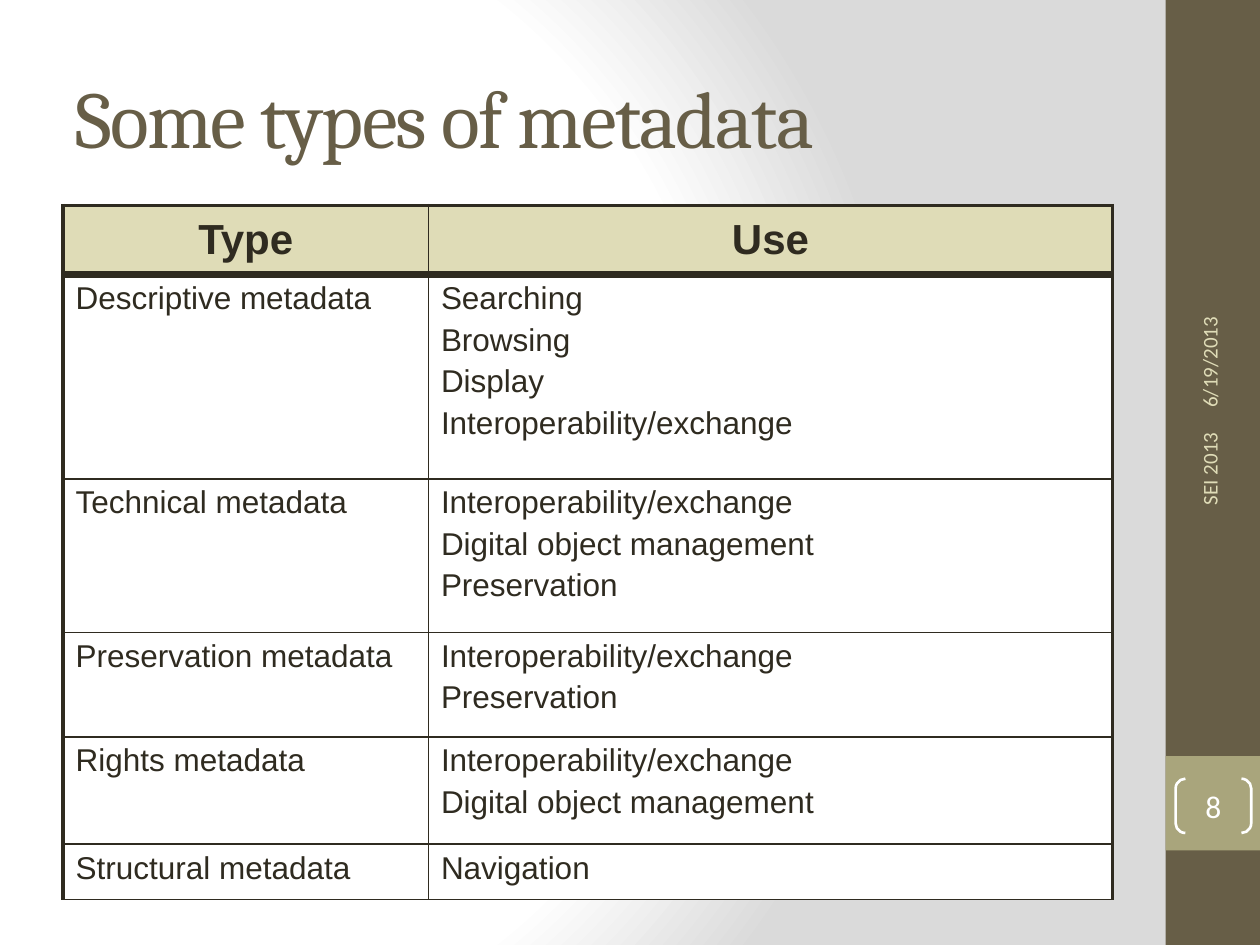
"""Build the slide that lists types of metadata and their uses."""
import pptx
import pptx.dml.color
import pptx.enum.shapes
import pptx.enum.text
import pptx.oxml
import pptx.oxml.ns
import pptx.util

Pt = pptx.util.Pt
SHAPE = pptx.enum.shapes.MSO_SHAPE
ALIGN = pptx.enum.text.PP_ALIGN
ANCHOR = pptx.enum.text.MSO_ANCHOR

TITLE = "Some types of metadata"
HEADINGS = ("Type", ["Use"])
EXCHANGE = "Interoperability/exchange"
USES = [
    ("Descriptive metadata", ["Searching", "Browsing", "Display", EXCHANGE]),
    ("Technical metadata", [EXCHANGE, "Digital object management", "Preservation"]),
    ("Preservation metadata", [EXCHANGE, "Preservation"]),
    ("Rights metadata", [EXCHANGE, "Digital object management"]),
    ("Structural metadata", ["Navigation"]),
]
COLUMN_WIDTHS = (208.8, 391)
ROW_HEIGHTS = (39.6, 116.6, 87.8, 59.8, 61.2, 31.7)
TABLE_LEFT, TABLE_TOP = 36, 117.4
SIDEBAR = {"left": 666, "width": 54}
SIDE_LABELS = [
    ("6/19/2013", 144, 192, ALIGN.LEFT),
    ("SEI 2013", 333.4, 186.5, ALIGN.RIGHT),
]
PAGE_NUMBER = "8"

THEME = {
    "ink": "2F2B20", "brown": "675E47", "olive": "A9A57C", "sand": "DFDCB7",
    "white": "FFFFFF", "grey": "DADADA",
    "title": {"name": "Cambria", "size": Pt(46), "bold": False},
    "heading": {"name": "Arial", "size": Pt(24), "bold": True},
    "cell": {"name": "Arial", "size": Pt(18), "bold": False},
    "label": {"name": "Calibri", "size": Pt(12), "bold": False},
    "number": {"name": "Calibri", "size": Pt(18), "bold": False},
    "thin": 1, "edge": 2.25, "rule": 4.5,
}


def color(name):
    return pptx.dml.color.RGBColor.from_string(THEME[name])


def xml(tag, attributes, content):
    names = pptx.oxml.ns.nsdecls("a")
    return pptx.oxml.parse_xml(f"<a:{tag} {names} {attributes}>{content}</a:{tag}>")


def paint(shape, name):
    shape.fill.solid()
    shape.fill.fore_color.rgb = color(name)


def write(frame, lines, style, ink, align=ALIGN.LEFT, spaced=False):
    for index, line in enumerate(lines):
        para = frame.add_paragraph() if index else frame.paragraphs[0]
        para.alignment = align
        if spaced:
            gap = xml("spcBef", "", '<a:spcPct val="20000"/>')
            para._p.get_or_add_pPr().append(gap)
        span = para.add_run()
        span.text = line
        for key, value in THEME[style].items():
            setattr(span.font, key, value)
        span.font.color.rgb = color(ink)


def add_background(page):
    page.background.fill.solid()
    holder = page._element.find(".//" + pptx.oxml.ns.qn("p:bgPr"))
    stops = "".join(
        f'<a:gs pos="{place * 1000}"><a:srgbClr val="{THEME[name]}"/></a:gs>'
        for place, name in ((0, "white"), (75, "white"), (100, "grey"))
    )
    gradient = xml(
        "gradFill", 'rotWithShape="1"',
        f'<a:gsLst>{stops}</a:gsLst><a:path path="circle">'
        '<a:fillToRect l="20000" t="50000" r="100000" b="50000"/></a:path>',
    )
    holder.replace(holder[0], gradient)


def add_block(page, top, height, name):
    block = page.shapes.add_shape(
        SHAPE.RECTANGLE, Pt(SIDEBAR["left"]), Pt(top), Pt(SIDEBAR["width"]), Pt(height))
    block.shadow.inherit = False
    paint(block, name)
    block.line.fill.background()


def add_title(page):
    title = page.shapes.title
    place = {"left": 36, "top": 21.6, "width": 600, "height": 90}
    for key, value in place.items():
        setattr(title, key, Pt(value))
    title.text_frame.vertical_anchor = ANCHOR.MIDDLE
    write(title.text_frame, [TITLE], "title", "brown")
    title.text_frame.paragraphs[0].runs[0]._r.get_or_add_rPr().set("spc", "-100")


def add_borders(cell, widths):
    for side, width in widths.items():
        line = xml(
            f"ln{side}", f'w="{Pt(width)}"',
            f'<a:solidFill><a:srgbClr val="{THEME["ink"]}"/></a:solidFill>')
        cell._tc.get_or_add_tcPr().append(line)


def add_table(page):
    rows = [HEADINGS] + USES
    table = page.shapes.add_table(
        len(rows), len(COLUMN_WIDTHS), Pt(TABLE_LEFT), Pt(TABLE_TOP),
        Pt(sum(COLUMN_WIDTHS)), Pt(sum(ROW_HEIGHTS))).table
    table.first_row = table.horz_banding = False
    for column, width in zip(table.columns, COLUMN_WIDTHS):
        column.width = Pt(width)
    thin, edge, rule = THEME["thin"], THEME["edge"], THEME["rule"]
    for index, (kind, uses) in enumerate(rows):
        table.rows[index].height = Pt(ROW_HEIGHTS[index])
        heading = index == 0
        for position, lines in enumerate(([kind], uses)):
            cell = table.cell(index, position)
            add_borders(cell, {
                "L": thin if position else edge,
                "R": edge if position else thin,
                "T": edge if heading else rule if index == 1 else thin,
                "B": rule if heading else thin,
            })
            paint(cell, "sand" if heading else "white")
            cell.vertical_anchor = ANCHOR.MIDDLE if heading else ANCHOR.TOP
            write(cell.text_frame, lines, "heading" if heading else "cell", "ink",
                  ALIGN.CENTER if heading else ALIGN.LEFT, spaced=True)


def add_side_label(page, text, middle, length, align):
    height = 28.8
    center = SIDEBAR["left"] + SIDEBAR["width"] / 2 - 2
    box = page.shapes.add_textbox(
        Pt(center - length / 2), Pt(middle - height / 2), Pt(length), Pt(height))
    box.rotation = 270
    box.text_frame.word_wrap = True
    box.text_frame.vertical_anchor = ANCHOR.MIDDLE
    write(box.text_frame, [text], "label", "sand", align)


def add_page_number(page):
    bracket = page.shapes.add_shape(
        SHAPE.DOUBLE_BRACKET, Pt(671.8), Pt(445), Pt(43.2), Pt(31))
    bracket.shadow.inherit = False
    bracket.adjustments[0] = 0.18
    bracket.fill.background()
    bracket.line.color.rgb = color("white")
    bracket.line.width = Pt(1.5)
    frame = bracket.text_frame
    for side in ("left", "top", "right", "bottom"):
        setattr(frame, f"margin_{side}", 0)
    frame.vertical_anchor = ANCHOR.MIDDLE
    write(frame, [PAGE_NUMBER], "number", "white", ALIGN.CENTER)


def main():
    deck = pptx.Presentation()
    deck.slide_width, deck.slide_height = Pt(720), Pt(540)
    page = deck.slides.add_slide(deck.slide_layouts.get_by_name("Title Only"))
    add_background(page)
    add_block(page, 0, 540, "brown")
    add_block(page, 432, 54, "olive")
    add_title(page)
    add_table(page)
    for label in SIDE_LABELS:
        add_side_label(page, *label)
    add_page_number(page)
    deck.save("out.pptx")


if __name__ == "__main__":
    main()
